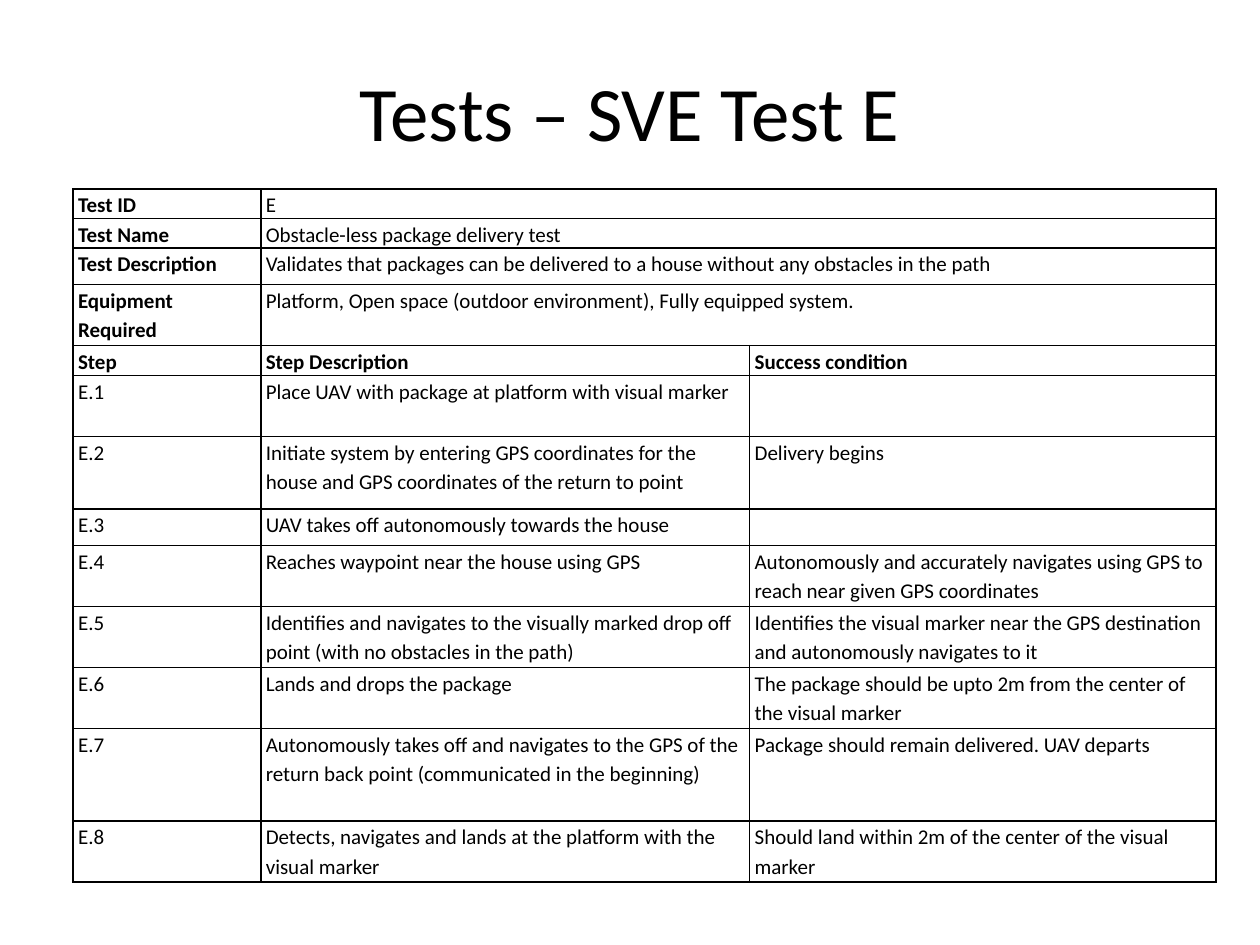
from dataclasses import dataclass

from lxml import etree
from pptx import Presentation
from pptx import util as u
from pptx.dml.color import RGBColor
from pptx.enum import text
from pptx.oxml import ns

COLORS = {"ink": "000000", "paper": "FFFFFF"}
FONT = "Calibri"
GRID_COLS, GRID_ROWS = 1000, 750
COLUMN_SPANS = (149, 388, 370)
SHORT, MEDIUM, TALL = 23.5, 29, 48.5


@dataclass
class TestRow:
    height: float
    label: str
    detail: str
    success: str = ""
    bold_cells: int = 0
    merged: bool = False


ROWS = [
    TestRow(SHORT, "Test ID", "E", bold_cells=1, merged=True),
    TestRow(SHORT, "Test Name", "Obstacle-less package delivery test", bold_cells=1, merged=True),
    TestRow(MEDIUM, "Test Description",
            "Validates that packages can be delivered to a house without any obstacles in the path",
            bold_cells=1, merged=True),
    TestRow(TALL, "Equipment Required",
            "Platform, Open space (outdoor environment), Fully equipped system.",
            bold_cells=1, merged=True),
    TestRow(SHORT, "Step", "Step Description", "Success condition", bold_cells=3),
    TestRow(TALL, "E.1", "Place UAV with package at platform with visual marker"),
    TestRow(57.5, "E.2",
            "Initiate system by entering GPS coordinates for the house and GPS coordinates of the return to point",
            "Delivery begins"),
    TestRow(MEDIUM, "E.3", "UAV takes off autonomously towards the house"),
    TestRow(TALL, "E.4", "Reaches waypoint near the house using GPS",
            "Autonomously and accurately navigates using GPS to reach near given GPS coordinates"),
    TestRow(TALL, "E.5",
            "Identifies and navigates to the visually marked drop off point (with no obstacles in the path)",
            "Identifies the visual marker near the GPS destination and autonomously navigates to it"),
    TestRow(TALL, "E.6", "Lands and drops the package",
            "The package should be upto 2m from the center of the visual marker"),
    TestRow(73.5, "E.7",
            "Autonomously takes off and navigates to the GPS of the return back point (communicated in the beginning)",
            "Package should remain delivered. UAV departs"),
    TestRow(TALL, "E.8", "Detects, navigates and lands at the platform with the visual marker",
            "Should land within 2m of the center of the visual marker"),
]

prs = Presentation()
prs.slide_width, prs.slide_height = u.Inches(10), u.Inches(7.5)


def col(n: float) -> int:
    return round(prs.slide_width * n / GRID_COLS)


def row(n: float) -> int:
    return round(prs.slide_height * n / GRID_ROWS)


def style(p, size: float, bold: bool = False) -> None:
    p.font.name = FONT
    p.font.size = u.Pt(size)
    p.font.bold = bold
    p.font.color.rgb = RGBColor.from_string(COLORS["ink"])


def add_borders(cell) -> None:
    tc_pr = cell._tc.get_or_add_tcPr()
    for i, side in enumerate(("lnL", "lnR", "lnT", "lnB")):
        ln = etree.Element(ns.qn(f"a:{side}"), w=str(u.Pt(1)))
        fill = etree.SubElement(ln, ns.qn("a:solidFill"))
        etree.SubElement(fill, ns.qn("a:srgbClr"), val=COLORS["ink"])
        tc_pr.insert(i, ln)


def fill_cell(cell, words: str, bold: bool) -> None:
    cell.margin_left = cell.margin_right = col(4)
    cell.margin_top = cell.margin_bottom = 0
    cell.fill.solid()
    cell.fill.fore_color.rgb = RGBColor.from_string(COLORS["paper"])
    add_borders(cell)
    p = cell.text_frame.paragraphs[0]
    p.text = words
    p.line_spacing = 1.15
    style(p, 12, bold)


def add_title(s, words: str) -> None:
    tf = s.shapes.add_textbox(col(69), row(33), col(862), row(109)).text_frame
    tf.word_wrap = True
    tf.vertical_anchor = text.MSO_ANCHOR.MIDDLE
    p = tf.paragraphs[0]
    p.text = words
    p.alignment = text.PP_ALIGN.CENTER
    style(p, 44)


def add_test_table(s, rows: list[TestRow]) -> None:
    height = sum(r.height for r in rows)
    table = s.shapes.add_table(len(rows), len(COLUMN_SPANS), col(58), row(150),
                               col(sum(COLUMN_SPANS)), row(height)).table
    table.first_row = table.horz_banding = False
    for column, span in zip(table.columns, COLUMN_SPANS):
        column.width = col(span)
    for i, r in enumerate(rows):
        table.rows[i].height = row(r.height)
        for j, words in enumerate((r.label, r.detail, r.success)):
            fill_cell(table.cell(i, j), words, j < r.bold_cells)
        if r.merged:
            table.cell(i, 1).merge(table.cell(i, 2))


def main() -> None:
    s = prs.slides.add_slide(prs.slide_layouts[6])
    add_title(s, "Tests – SVE Test E")
    add_test_table(s, ROWS)
    prs.save("out.pptx")


if __name__ == "__main__":
    main()
